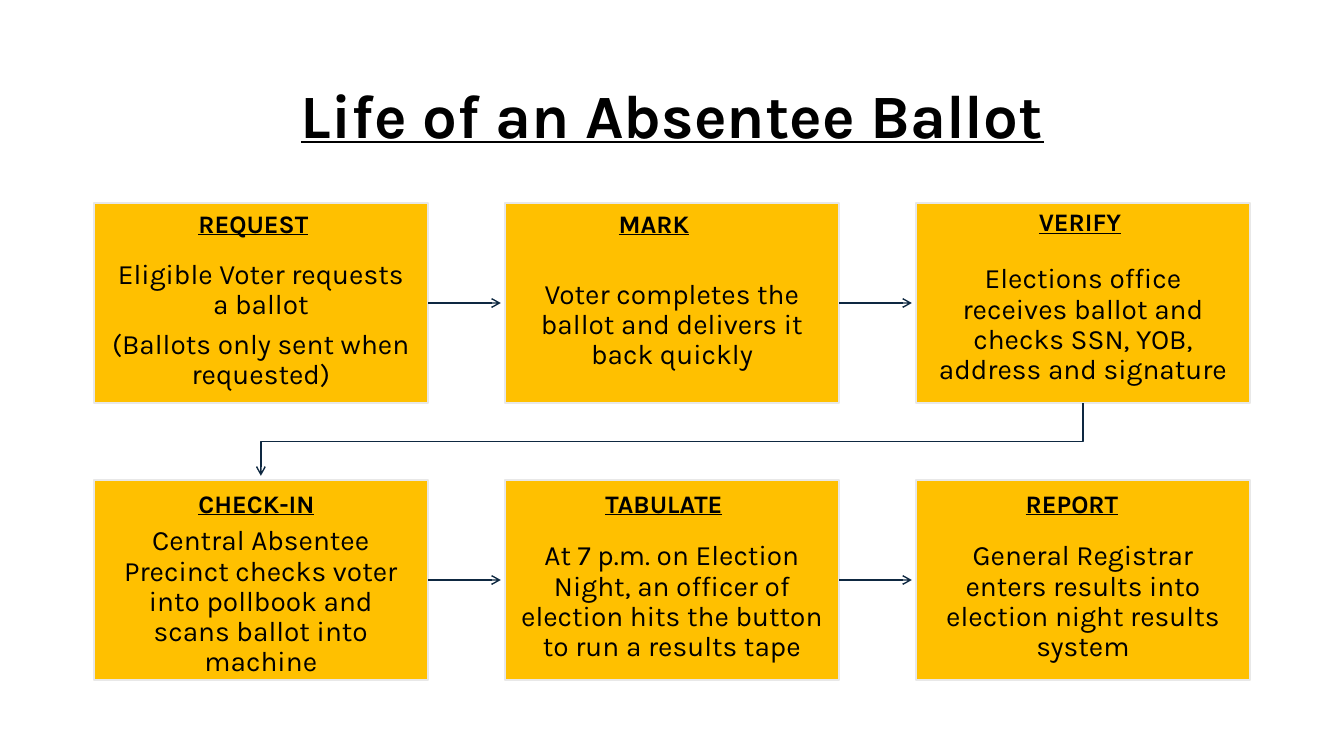
from lxml.etree import SubElement
from pptx import Presentation
from pptx.dml.color import RGBColor
from pptx.enum.shapes import MSO_CONNECTOR, MSO_SHAPE
from pptx.enum.text import MSO_ANCHOR, PP_ALIGN
from pptx.oxml.ns import qn
from pptx.util import Cm, Pt

FONT = "Karla"
LEFT, PITCH, WIDTH, HEIGHT = 2.36, 10.36, 8.43, 5.05
ROW_TOPS = (5.11, 12.09)
ARROW_GAP = 0.1

STEPS = (
    (
        ("REQUEST", 4.75, 5.11, ("Eligible Voter requests a ballot",
                                 "(Ballots only sent when requested)")),
        ("MARK", 15.34, 5.11, ("Voter completes the ballot and delivers it back quickly",)),
        ("VERIFY", 25.93, 5.08, ("Elections office receives ballot and checks SSN, YOB, "
                                 "address and signature",)),
    ),
    (
        ("CHECK-IN", 4.75, 12.17, ("Central Absentee Precinct checks voter into pollbook "
                                   "and scans ballot into machine",)),
        ("TABULATE", 15.01, 12.17, ("At 7 p.m. on Election Night, an officer of election "
                                    "hits the button to run a results tape",)),
        ("REPORT", 25.6, 12.17, ("General Registrar enters results into election night "
                                 "results system",)),
    ),
)


def rgb(value):
    """Return the colour for a hex string."""
    return RGBColor.from_string(value)


def add_run(p, text, size, strong=False):
    """Add a black run, bold and underlined if strong."""
    r = p.add_run()
    r.text = text
    r.font.name = FONT
    r.font.size = Pt(size)
    r.font.bold = r.font.underline = strong
    r.font.color.rgb = rgb("000000")


def add_heading(s, text, left, top, width, height, size, align=PP_ALIGN.LEFT):
    """Add a text box with one underlined line."""
    tf = s.shapes.add_textbox(Cm(left), Cm(top), Cm(width), Cm(height)).text_frame
    tf.word_wrap = True
    tf.vertical_anchor = MSO_ANCHOR.MIDDLE
    p = tf.paragraphs[0]
    p.alignment = align
    add_run(p, text, size, True)


def add_step(s, left, top, lines):
    """Add a yellow box with its description below the heading space."""
    sp = s.shapes.add_shape(MSO_SHAPE.RECTANGLE, Cm(left), Cm(top), Cm(WIDTH), Cm(HEIGHT))
    sp.shadow.inherit = False
    sp.fill.solid()
    sp.fill.fore_color.rgb = rgb("FFC000")
    sp.line.color.rgb = rgb("E8E8E8")
    sp.line.width = Pt(1.5)
    tf = sp.text_frame
    tf.word_wrap = True
    tf.vertical_anchor = MSO_ANCHOR.MIDDLE
    tf.margin_left = tf.margin_right = Cm(0.41)
    tf.margin_top, tf.margin_bottom = Cm(1.12), Cm(0)
    for i, line in enumerate(lines):
        p = tf.add_paragraph() if i else tf.paragraphs[0]
        p.alignment = PP_ALIGN.CENTER
        p.line_spacing = 0.9
        p.space_before = Pt(7 if i else 0)
        add_run(p, line, 20)


def style_arrow(sp):
    """Give a line its colour, width and arrowhead."""
    sp.line.color.rgb = rgb("0E2841")
    sp.line.width = Pt(1)
    SubElement(sp.line._get_or_add_ln(), qn("a:tailEnd"), type="arrow")


def add_arrow(s, left, right, y):
    """Add a straight arrow between neighbouring boxes."""
    sp = s.shapes.add_connector(MSO_CONNECTOR.STRAIGHT, Cm(left), Cm(y), Cm(right), Cm(y))
    style_arrow(sp)
    SubElement(sp._element.spPr, qn("a:effectLst"))


def add_turn(s, points):
    """Add an arrow that follows the given points."""
    start, *rest = [(Cm(x), Cm(y)) for x, y in points]
    builder = s.shapes.build_freeform(*start)
    builder.add_line_segments(rest, close=False)
    sp = builder.convert_to_shape()
    sp.shadow.inherit = False
    sp.fill.background()
    style_arrow(sp)


def main():
    """Build the slide and save it."""
    prs = Presentation()
    prs.slide_width, prs.slide_height = Cm(33.87), Cm(19.05)
    s = prs.slides.add_slide(prs.slide_layouts[6])
    add_heading(s, "Life of an Absentee Ballot", 2.34, 1.02, 29.21, 3.68, 44,
                PP_ALIGN.CENTER)
    for top, row in zip(ROW_TOPS, STEPS):
        for col, (name, name_left, name_top, lines) in enumerate(row):
            left = LEFT + col * PITCH
            add_step(s, left, top, lines)
            add_heading(s, name, name_left, name_top, 7.06, 1.02, 18)
            if col:
                add_arrow(s, left - PITCH + WIDTH, left - ARROW_GAP, top + HEIGHT / 2)
    first = LEFT + WIDTH / 2
    last = first + 2 * PITCH
    bottom = ROW_TOPS[0] + HEIGHT
    middle = (bottom + ROW_TOPS[1]) / 2
    add_turn(s, ((last, bottom), (last, middle), (first, middle),
                 (first, ROW_TOPS[1] - ARROW_GAP)))
    prs.save("out.pptx")


if __name__ == "__main__":
    main()
